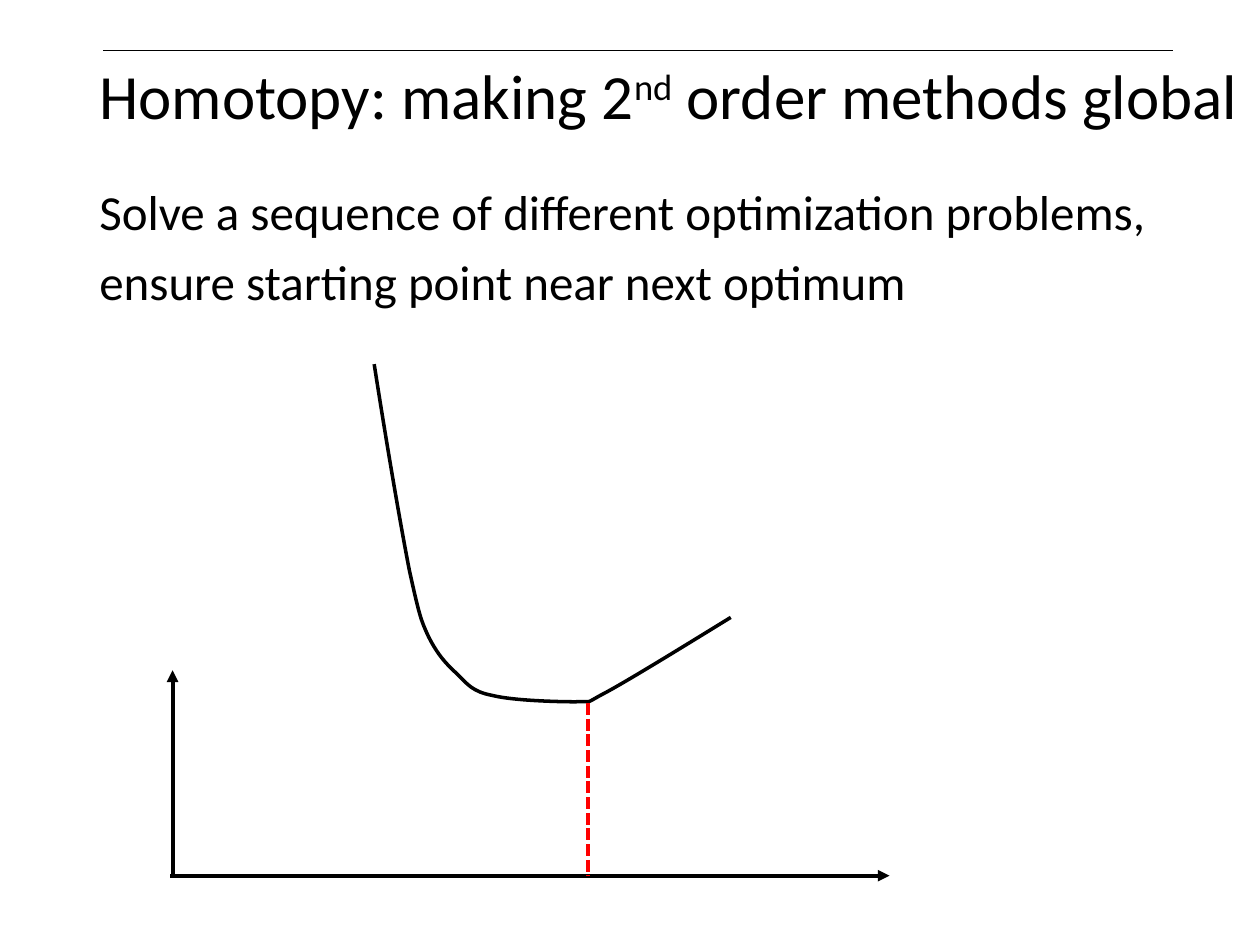
"""Build a slide on homotopy with a sketched objective curve and its optimum."""
from dataclasses import dataclass

import pptx
import pptx.dml.color
import pptx.enum.dml
import pptx.enum.shapes
import pptx.enum.text
import pptx.oxml
import pptx.oxml.ns
import pptx.util
from pptx.util import Inches


@dataclass(frozen=True)
class Theme:
    """Colours, font and sizes of the slide."""
    ink: str = "000000"
    accent: str = "FF0000"
    font: str = "Calibri"
    title_size: float = 36
    body_size: float = 28
    rule_width: float = 1
    curve_width: float = 2
    axis_width: float = 2.25


THEME = Theme()
ORIGIN = (1.37, 6.95)
OPTIMUM = (4.67, 5.58)
CURVE = [
    (5.8, 4.9),
    (5.41, 5.14), (5.02, 5.38), (4.82, 5.49),
    (4.61, 5.6), (4.73, 5.56), (4.57, 5.57),
    (4.42, 5.57), (4.07, 5.56), (3.91, 5.52),
    (3.75, 5.49), (3.71, 5.43), (3.63, 5.35),
    (3.54, 5.27), (3.47, 5.19), (3.4, 5.05),
    (3.34, 4.92), (3.33, 4.89), (3.25, 4.53),
    (3.18, 4.17), (3.07, 3.53), (2.97, 2.89),
]


def style_line(line, color, width):
    """Give a line its colour and width in points."""
    line.color.rgb = pptx.dml.color.RGBColor.from_string(color)
    line.width = pptx.util.Pt(width)


def add_line(page, start, end, width, color=THEME.ink, arrow=False, dashed=False):
    """Add a straight line, optionally dashed or with an arrowhead at its end."""
    points = [Inches(value) for value in (*start, *end)]
    connector = page.shapes.add_connector(
        pptx.enum.shapes.MSO_CONNECTOR.STRAIGHT, *points)
    style_line(connector.line, color, width)
    if dashed:
        connector.line.dash_style = pptx.enum.dml.MSO_LINE.SQUARE_DOT
        connector.line._ln.find(pptx.oxml.ns.qn("a:prstDash")).set("val", "sysDash")
    if arrow:
        connector.line._ln.append(pptx.oxml.parse_xml(
            f'<a:tailEnd {pptx.oxml.ns.nsdecls("a")} type="triangle"/>'))
    connector._element.spPr.append(pptx.oxml.parse_xml(
        f'<a:effectLst {pptx.oxml.ns.nsdecls("a")}/>'))


def add_text(page, place, paragraphs, size, anchor, space_before=0):
    """Add a text box; each paragraph is a list of (text, superscript) spans."""
    box = page.shapes.add_textbox(*[Inches(value) for value in place])
    frame = box.text_frame
    frame.word_wrap = True
    frame.vertical_anchor = anchor
    for index, spans in enumerate(paragraphs):
        para = frame.add_paragraph() if index else frame.paragraphs[0]
        para.line_spacing = 0.9
        para.space_before = pptx.util.Pt(space_before)
        para.font.name = THEME.font
        para.font.size = pptx.util.Pt(size)
        para.font.color.rgb = pptx.dml.color.RGBColor.from_string(THEME.ink)
        for text, superscript in spans:
            span = para.add_run()
            span.text = text
            if superscript:
                span._r.get_or_add_rPr().set("baseline", "30000")


def add_curve(page, points, width):
    """Add an open Bézier curve from a start point and triples of points."""
    start, *rest = [(Inches(x), Inches(y)) for x, y in points]
    builder = page.shapes.build_freeform(*start)
    builder.add_line_segments(rest, close=False)
    curve = builder.convert_to_shape()
    segments = list(curve._element.iter(pptx.oxml.ns.qn("a:lnTo")))
    for index in range(0, len(segments), 3):
        bezier = pptx.oxml.parse_xml(
            f'<a:cubicBezTo {pptx.oxml.ns.nsdecls("a")}/>')
        segments[index].addprevious(bezier)
        for segment in segments[index:index + 3]:
            bezier.append(segment[0])
            segment.getparent().remove(segment)
    curve.fill.background()
    curve.shadow.inherit = False
    style_line(curve.line, THEME.ink, width)


def main():
    """Build and save the slide."""
    deck = pptx.Presentation()
    deck.slide_width, deck.slide_height = Inches(10), Inches(7.5)
    page = deck.slides.add_slide(deck.slide_layouts[6])
    anchors = pptx.enum.text.MSO_ANCHOR

    add_line(page, (0.82, 0.4), (9.31, 0.4), THEME.rule_width)
    title = [("Homotopy: making 2", False), ("nd", True),
             (" order methods global", False)]
    add_text(page, (0.69, 0.06, 9.65, 1.45), [title], THEME.title_size,
             anchors.MIDDLE)
    body = [[("Solve a sequence of different optimization problems,", False)],
            [("ensure starting point near next optimum", False)]]
    add_text(page, (0.69, 1.44, 8.62, 5.91), body, THEME.body_size,
             anchors.TOP, space_before=10)

    left, base = ORIGIN
    add_line(page, (left - 0.02, base), (7.06, base), THEME.axis_width, arrow=True)
    add_line(page, ORIGIN, (left, 5.32), THEME.axis_width, arrow=True)
    add_curve(page, CURVE, THEME.curve_width)
    add_line(page, OPTIMUM, (OPTIMUM[0], base), THEME.axis_width, THEME.accent,
             dashed=True)
    deck.save("out.pptx")


if __name__ == "__main__":
    main()
